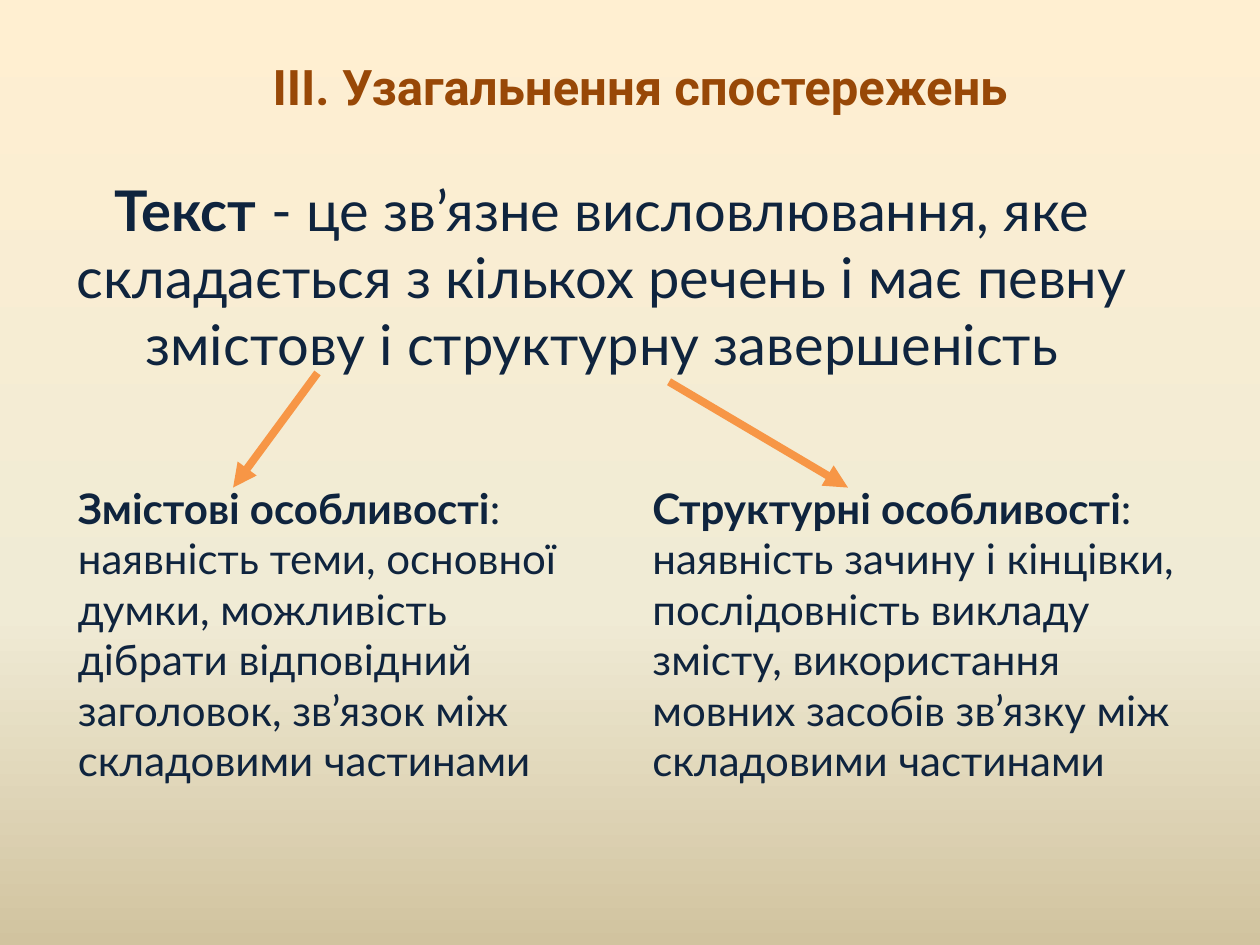
from lxml import etree
from pptx import Presentation
from pptx.dml.color import RGBColor
from pptx.enum.shapes import MSO_CONNECTOR
from pptx.enum.text import MSO_ANCHOR, PP_ALIGN
from pptx.oxml import parse_xml
from pptx.oxml.ns import nsdecls, qn
from pptx.util import Inches, Pt

NAVY, BROWN, ORANGE = "0F243E", "984807", "F79646"
BACKGROUND = [(0, "FFEFD1"), (65, "F0EBD5"), (100, "D1C39F")]
DEFINITION = ("Текст", " - це зв’язне висловлювання, яке складається з кількох речень "
              "і має певну змістову і структурну завершеність")
FEATURES = [
    (0.52, 4.02, "Змістові особливості",
     ": наявність теми, основної думки, можливість дібрати відповідний "
     "заголовок, зв’язок між складовими частинами"),
    (5.08, 4.34, "Структурні особливості",
     ": наявність зачину і кінцівки, послідовність викладу змісту, "
     "використання мовних засобів зв’язку між складовими частинами"),
]
ARROWS = [((5.31, 3.03), (6.73, 3.87)), ((2.52, 2.96), (1.85, 3.87))]


def rgb(color):
    """Turn a hex string into a colour."""
    return RGBColor.from_string(color)


def set_background(s, stops):
    """Fill the slide with a gradient running from top to bottom."""
    marks = "".join(f'<a:gs pos="{pos * 1000}"><a:srgbClr val="{color}"/></a:gs>'
                    for pos, color in stops)
    bg = parse_xml(f'<p:bg {nsdecls("p", "a")}><p:bgPr><a:gradFill rotWithShape="1">'
                   f'<a:gsLst>{marks}</a:gsLst><a:lin ang="5400000" scaled="0"/>'
                   '</a:gradFill><a:effectLst/></p:bgPr></p:bg>')
    s.element.cSld.insert(0, bg)


def add_run(p, text, color=NAVY, **formats):
    """Append a run with the given font formats."""
    r = p.add_run()
    r.text = text
    r.font.color.rgb = rgb(color)
    for name, value in formats.items():
        setattr(r.font, name, value)


def set_title(s, text):
    """Place and format the slide title."""
    sp = s.shapes.title
    box = {"left": 0.58, "top": 0.26, "width": 9, "height": 0.85}
    for name, value in box.items():
        setattr(sp, name, Inches(value))
    tf = sp.text_frame
    tf.vertical_anchor = MSO_ANCHOR.MIDDLE
    p = tf.paragraphs[0]
    p.alignment = PP_ALIGN.CENTER
    add_run(p, text, BROWN, name="Roboto", size=Pt(28), bold=True)


def add_text(s, box, term, rest, size, align=PP_ALIGN.LEFT):
    """Add a wrapped text box that opens with a bold term."""
    tf = s.shapes.add_textbox(*map(Inches, box)).text_frame
    tf.word_wrap = True
    p = tf.paragraphs[0]
    p.alignment = align
    for text, bold in ((term, True), (rest, False)):
        add_run(p, text, name="Lato", size=Pt(size), bold=bold)


def add_arrow(s, start, end):
    """Draw a straight arrow between two points."""
    line = s.shapes.add_connector(MSO_CONNECTOR.STRAIGHT, *map(Inches, start + end))
    line.line.color.rgb = rgb(ORANGE)
    line.line.width = Pt(4.5)
    etree.SubElement(line.line._get_or_add_ln(), qn("a:tailEnd"), type="triangle")
    etree.SubElement(line._element.spPr, qn("a:effectLst"))


def main():
    """Build and save the slide."""
    prs = Presentation()
    prs.slide_width, prs.slide_height = Inches(10), Inches(7.5)
    s = prs.slides.add_slide(prs.slide_layouts[5])
    set_background(s, BACKGROUND)
    set_title(s, "ІІІ. Узагальнення спостережень")
    add_text(s, (0.28, 1.34, 9, 2.08), *DEFINITION, 32, PP_ALIGN.CENTER)
    for left, width, term, rest in FEATURES:
        add_text(s, (left, 3.78, width, 2.52), term, rest, 24)
    for start, end in ARROWS:
        add_arrow(s, start, end)
    prs.save("out.pptx")


if __name__ == "__main__":
    main()
